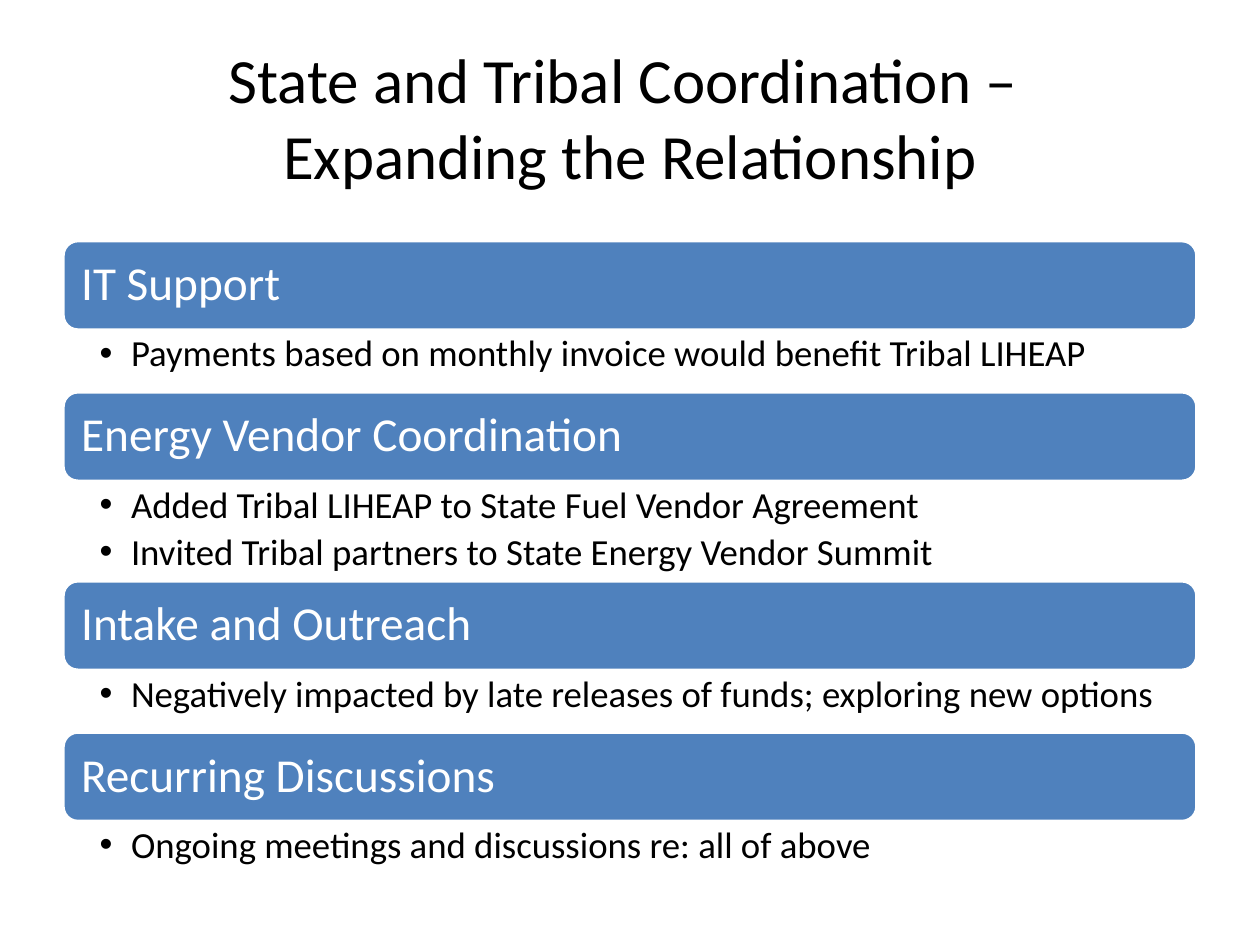
from lxml.etree import SubElement
from pptx import Presentation
from pptx.dml.color import RGBColor
from pptx.enum.shapes import MSO_SHAPE
from pptx.enum.text import MSO_ANCHOR, PP_ALIGN
from pptx.oxml.ns import qn
from pptx.util import Inches, Pt

COLORS = {"bar": "4F81BD", "light": "FFFFFF", "dark": "000000"}
FONT = "Calibri"
LEFT, TOP, WIDTH = 0.5, 1.91, 9
BAR_H = 0.71
LIST_H, EXTRA_LINE_H = 0.49, 0.3

TITLE = "State and Tribal Coordination – \vExpanding the Relationship"
SECTIONS = [
    ("IT Support",
     ["Payments based on monthly invoice would benefit Tribal LIHEAP"]),
    ("Energy Vendor Coordination",
     ["Added Tribal LIHEAP to State Fuel Vendor Agreement",
      "Invited Tribal partners to State Energy Vendor Summit"]),
    ("Intake and Outreach",
     ["Negatively impacted by late releases of funds; exploring new options"]),
    ("Recurring Discussions",
     ["Ongoing meetings and discussions re: all of above"]),
]


def rgb(name):
    return RGBColor.from_string(COLORS[name])


def add_bullet(p):
    pPr = p._p.get_or_add_pPr()
    pPr.set("marL", str(Inches(0.25)))
    pPr.set("indent", str(-Inches(0.25)))
    SubElement(pPr, qn("a:buFont"), typeface="Arial")
    SubElement(pPr, qn("a:buChar"), char="•")


def write(tf, lines, *, size, color="dark", align=PP_ALIGN.LEFT,
          anchor=MSO_ANCHOR.TOP, insets=(0.1, 0.05, 0.1, 0.05),
          spacing=None, after=None, bullet=False):
    """Fill a text frame; insets are left, top, right, bottom in inches."""
    tf.word_wrap = True
    tf.vertical_anchor = anchor
    (tf.margin_left, tf.margin_top,
     tf.margin_right, tf.margin_bottom) = map(Inches, insets)
    for i, line in enumerate(lines):
        p = tf.paragraphs[0] if i == 0 else tf.add_paragraph()
        p.text = line
        p.alignment = align
        if spacing:
            p.line_spacing = spacing
        if after:
            p.space_after = Pt(size * after)
        if bullet:
            p.level = 1
            add_bullet(p)
        for r in p.runs:
            r.font.name, r.font.size = FONT, Pt(size)
            r.font.color.rgb = rgb(color)


def add_title(s):
    sp = s.shapes.title
    sp.left, sp.top = Inches(LEFT), Inches(0.3)
    sp.width, sp.height = Inches(WIDTH), Inches(1.25)
    write(sp.text_frame, [TITLE], size=36, align=PP_ALIGN.CENTER,
          anchor=MSO_ANCHOR.MIDDLE)


def add_bar(shapes, top, heading):
    sp = shapes.add_shape(MSO_SHAPE.ROUNDED_RECTANGLE, Inches(LEFT),
                          Inches(top), Inches(WIDTH), Inches(BAR_H))
    sp.shadow.inherit = False
    sp.fill.solid()
    sp.fill.fore_color.rgb = rgb("bar")
    sp.line.color.rgb = rgb("light")
    sp.line.width = Pt(2)
    write(sp.text_frame, [heading], size=27, color="light",
          anchor=MSO_ANCHOR.MIDDLE, insets=(0.11, 0.11, 0.11, 0.11),
          spacing=0.9)


def add_list(shapes, top, height, items):
    sp = shapes.add_textbox(Inches(LEFT), Inches(top), Inches(WIDTH),
                            Inches(height))
    write(sp.text_frame, items, size=21, insets=(0.29, 0.04, 0.21, 0.04),
          spacing=0.9, after=0.2, bullet=True)


def add_sections(s):
    """Stack the bars and their lists, each directly below the last."""
    shapes = s.shapes.add_group_shape().shapes
    top = TOP
    for heading, items in SECTIONS:
        add_bar(shapes, top, heading)
        height = LIST_H + EXTRA_LINE_H * (len(items) - 1)
        add_list(shapes, top + BAR_H, height, items)
        top += BAR_H + height


def main():
    prs = Presentation()
    prs.slide_width, prs.slide_height = Inches(10), Inches(7.5)
    s = prs.slides.add_slide(prs.slide_layouts[5])
    add_title(s)
    add_sections(s)
    prs.save("out.pptx")


if __name__ == "__main__":
    main()
